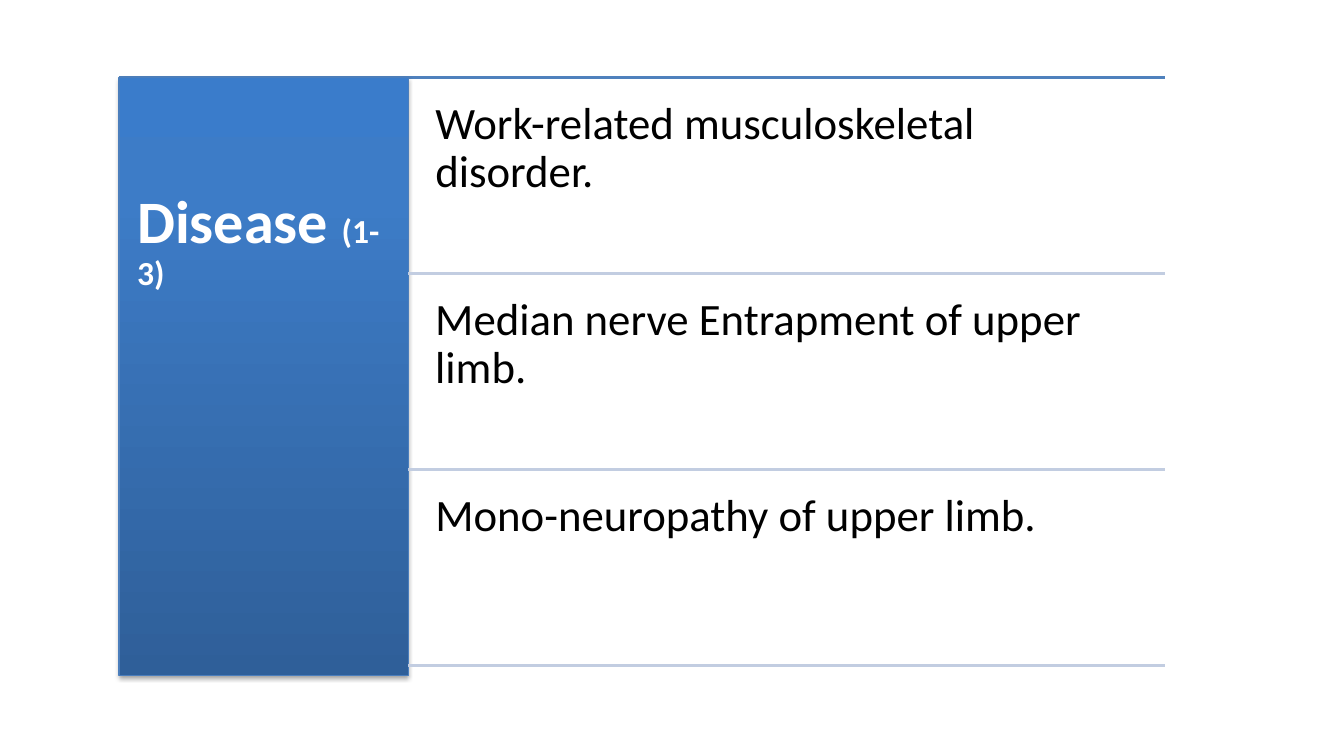
from copy import deepcopy
from dataclasses import dataclass

from lxml import etree
from pptx import Presentation
from pptx.dml.color import RGBColor
from pptx.enum import shapes, text
from pptx.oxml import ns
from pptx.util import Pt


@dataclass(frozen=True)
class Theme:
    font: str = "Calibri"
    heading_size: float = 43
    citation_size: float = 24
    item_size: float = 32
    heading_color: str = "FFFFFF"
    item_color: str = "000000"
    top_rule: str = "4F81BD"
    item_rule: str = "C2CDE1"
    panel_line: str = "4B7EBC"
    panel_stops: tuple = ((0, "2F5F99"), (0.8, "3D7CC7"), (1, "3A7CCB"))
    rule_width: float = 2
    line_spacing: float = 0.9


THEME = Theme()
ITEMS = (  # wording, text width
    ("Work-related musculoskeletal disorder.", 486),
    ("Median nerve Entrapment of upper limb.", 501),
    ("Mono-neuropathy of upper limb.", 495),
)


def rgb(color):
    return RGBColor.from_string(color)


def add_rule(slide, left, right, y, color):
    rule = slide.shapes.add_connector(
        shapes.MSO_CONNECTOR.STRAIGHT, Pt(left), Pt(y), Pt(right), Pt(y))
    rule.line.color.rgb = rgb(color)
    rule.line.width = Pt(THEME.rule_width)
    etree.SubElement(rule.line._get_or_add_ln().getparent(), ns.qn("a:effectLst"))


def set_frame(frame, inset, top_inset):
    frame.word_wrap = True
    frame.vertical_anchor = text.MSO_ANCHOR.TOP
    frame.margin_left = frame.margin_right = frame.margin_bottom = Pt(inset)
    frame.margin_top = Pt(top_inset)


def style_paragraph(paragraph, size, color, bold=False):
    paragraph.alignment = text.PP_ALIGN.LEFT
    paragraph.line_spacing = THEME.line_spacing
    font = paragraph.font
    font.name, font.size, font.bold = THEME.font, Pt(size), bold
    font.color.rgb = rgb(color)


def fill_upward(fill):
    """Gradient from the bottom edge to the top edge."""
    fill.gradient()
    fill.gradient_angle = 90
    first = fill.gradient_stops[0]._gs
    first.addnext(deepcopy(first))
    for stop, (position, color) in zip(fill.gradient_stops, THEME.panel_stops):
        stop.position = position
        stop.color.rgb = rgb(color)


def add_soft_shadow(shape):
    shape.shadow.inherit = False
    effects = shape._element.spPr.find(ns.qn("a:effectLst"))
    shadow = etree.SubElement(effects, ns.qn("a:outerShdw"), blurRad=str(Pt(3.1)),
                              dist=str(Pt(1.8)), dir="5400000", rotWithShape="0")
    color = etree.SubElement(shadow, ns.qn("a:srgbClr"), val="000000")
    etree.SubElement(color, ns.qn("a:alpha"), val="35000")


def add_heading_panel(slide, left, top, width, height):
    panel = slide.shapes.add_shape(
        shapes.MSO_SHAPE.RECTANGLE, Pt(left), Pt(top), Pt(width), Pt(height))
    fill_upward(panel.fill)
    panel.line.color.rgb = rgb(THEME.panel_line)
    panel.line.width = Pt(0.75)
    add_soft_shadow(panel)
    set_frame(panel.text_frame, 13, 81)
    heading = panel.text_frame.paragraphs[0]
    style_paragraph(heading, THEME.heading_size, THEME.heading_color, bold=True)
    heading.add_run().text = "Disease "
    citation = heading.add_run()
    citation.text = "(1-3)"
    citation.font.size = Pt(THEME.citation_size)


def add_items(slide, left, top, width, height):
    """Equal rows, each a text with a rule below it."""
    gap, indent = 7, 10
    pitch = (height - gap) / len(ITEMS)
    for row, (wording, text_width) in enumerate(ITEMS):
        row_top = top + gap + row * pitch
        item = slide.shapes.add_textbox(
            Pt(left + indent), Pt(row_top), Pt(text_width), Pt(pitch - gap))
        set_frame(item.text_frame, 9.4, 9.4)
        paragraph = item.text_frame.paragraphs[0]
        paragraph.text = wording
        style_paragraph(paragraph, THEME.item_size, THEME.item_color)
        add_rule(slide, left, left + width, row_top + pitch - gap, THEME.item_rule)


def add_disease_slide(deck):
    slide = deck.slides.add_slide(deck.slide_layouts[6])
    left, top, width, panel_width = 85, 55.5, 747.5, 206.5
    add_rule(slide, left, left + width, top, THEME.top_rule)
    add_heading_panel(slide, left, top, panel_width, 427)
    add_items(slide, left + panel_width, top, width - panel_width, 427)


def main():
    deck = Presentation()
    deck.slide_width, deck.slide_height = Pt(960), Pt(540)
    add_disease_slide(deck)
    deck.save("out.pptx")


if __name__ == "__main__":
    main()
